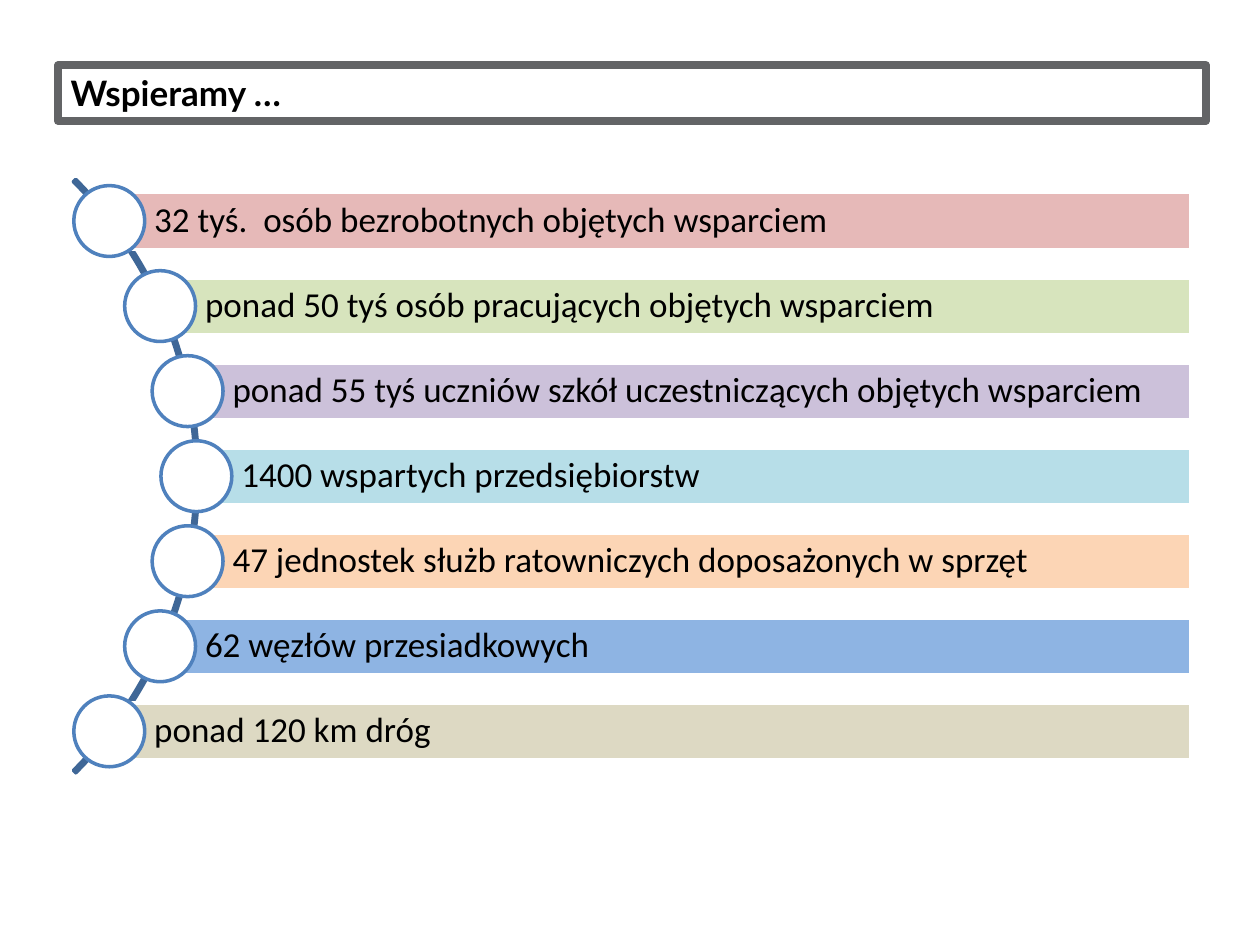
"""Build a slide listing supported groups along a curved timeline."""
from dataclasses import dataclass
from math import sqrt

from pptx import Presentation
from pptx.dml.color import RGBColor
from pptx.enum.shapes import MSO_SHAPE
from pptx.enum.text import MSO_ANCHOR, MSO_AUTO_SIZE, PP_ALIGN
from pptx.util import Pt

ARC = MSO_SHAPE.BLOCK_ARC
RECT = MSO_SHAPE.RECTANGLE
OVAL = MSO_SHAPE.OVAL
MIDDLE = MSO_ANCHOR.MIDDLE
TOP = MSO_ANCHOR.TOP
LEFT = PP_ALIGN.LEFT
FIXED = MSO_AUTO_SIZE.NONE

HUES = {
    "white": "FFFFFF",
    "black": "000000",
    "frame": "636466",
    "arc": "3F6797",
    "ring": "4F81BD",
    "rose": "E6B9B8",
    "green": "D7E4BD",
    "violet": "CCC1DA",
    "aqua": "B7DEE8",
    "peach": "FCD5B5",
    "blue": "8EB4E3",
    "sand": "DDD9C3",
}

MID_X, MID_Y = -126.2, 272.1
SPAN = 479.5
REACH = 238.4
PITCH = 48.6
BAR = 32.4
RING = 40.5
EDGE = 680.4


@dataclass
class Item:
    """One supported group and the hue of its bar."""

    text: str
    hue: str


@dataclass
class Box:
    """A frame in points."""

    left: float
    top: float
    width: float
    height: float


ITEMS = [
    Item("32 tyś.  osób bezrobotnych objętych wsparciem", "rose"),
    Item("ponad 50 tyś osób pracujących objętych wsparciem", "green"),
    Item("ponad 55 tyś uczniów szkół uczestniczących objętych wsparciem", "violet"),
    Item("1400 wspartych przedsiębiorstw", "aqua"),
    Item("47 jednostek służb ratowniczych doposażonych w sprzęt", "peach"),
    Item("62 węzłów przesiadkowych", "blue"),
    Item("ponad 120 km dróg", "sand"),
]


def tint(name: str) -> RGBColor:
    """Return the colour with this name."""
    return RGBColor.from_string(HUES[name])


def place(shape, box: Box) -> None:
    """Move and size a shape."""
    shape.left, shape.top = Pt(box.left), Pt(box.top)
    shape.width, shape.height = Pt(box.width), Pt(box.height)


def stroke(shape, hue: str, width: float) -> None:
    """Set the outline of a shape."""
    shape.line.color.rgb = tint(hue)
    shape.line.width = Pt(width)


def draw(slide, kind, box: Box, fill: str, line: str):
    """Add a filled and outlined preset shape."""
    shape = slide.shapes.add_shape(kind, 0, 0, 0, 0)
    place(shape, box)
    shape.shadow.inherit = False
    shape.fill.solid()
    shape.fill.fore_color.rgb = tint(fill)
    stroke(shape, line, 2)
    return shape


def write(shape, text: str, face: str, bold: bool) -> None:
    """Put left-aligned black text into a shape."""
    frame = shape.text_frame
    frame.text = text
    frame.word_wrap = True
    frame.auto_size = FIXED
    para = frame.paragraphs[0]
    para.alignment = LEFT
    font = para.runs[0].font
    font.name, font.size, font.bold = face, Pt(20), bold
    font.color.rgb = tint("black")


def add_title(slide) -> None:
    """Format the framed slide title."""
    title = slide.shapes.title
    place(title, Box(33.1, 37.4, 655.9, 31.7))
    stroke(title, "frame", 4.5)
    write(title, "Wspieramy …", "Lato", True)
    title.text_frame.vertical_anchor = TOP


def add_arc(slide) -> None:
    """Draw the curve that joins the rings."""
    half = SPAN / 2
    box = Box(MID_X - half, MID_Y - half, SPAN, SPAN)
    arc = draw(slide, ARC, box, "arc", "arc")
    for spot, value in enumerate((189, 27, 0.004)):
        arc.adjustments[spot] = value


def add_item(slide, item: Item, step: float) -> None:
    """Draw a bar and its ring, step rows away from the middle."""
    rise = step * PITCH
    left = MID_X + sqrt(REACH ** 2 - rise ** 2)
    mid = MID_Y + rise
    box = Box(left, mid - BAR / 2, EDGE - left, BAR)
    bar = draw(slide, RECT, box, item.hue, "white")
    write(bar, item.text, "Calibri", False)
    frame = bar.text_frame
    frame.vertical_anchor = MIDDLE
    frame.margin_left = Pt(25.7)
    frame.margin_top = frame.margin_right = frame.margin_bottom = Pt(4.5)
    frame.paragraphs[0].line_spacing = 0.9
    ring = Box(left - RING / 2, mid - RING / 2, RING, RING)
    draw(slide, OVAL, ring, "white", "ring")


def main() -> None:
    """Build and save the slide."""
    deck = Presentation()
    deck.slide_width, deck.slide_height = Pt(720), Pt(540)
    slide = deck.slides.add_slide(deck.slide_layouts[5])
    add_title(slide)
    add_arc(slide)
    for row, item in enumerate(ITEMS):
        add_item(slide, item, row - (len(ITEMS) - 1) / 2)
    deck.save("out.pptx")


if __name__ == "__main__":
    main()
